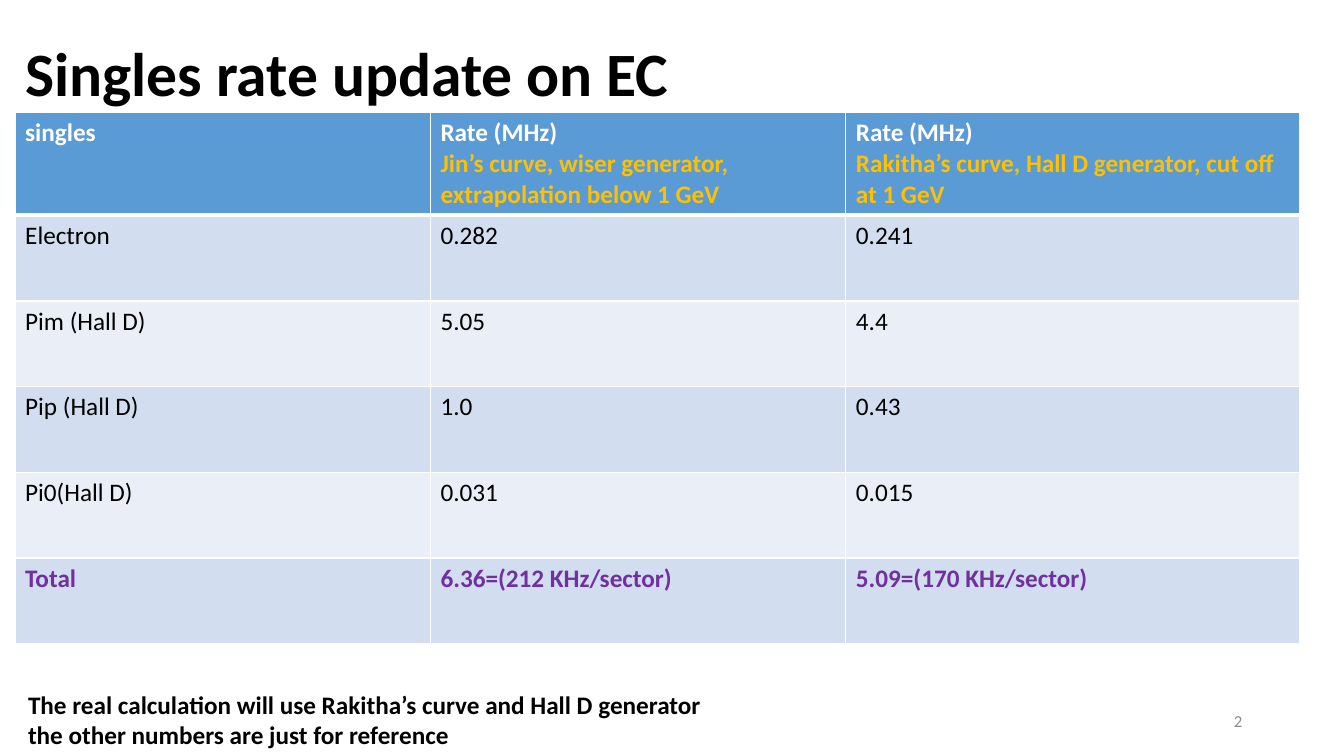
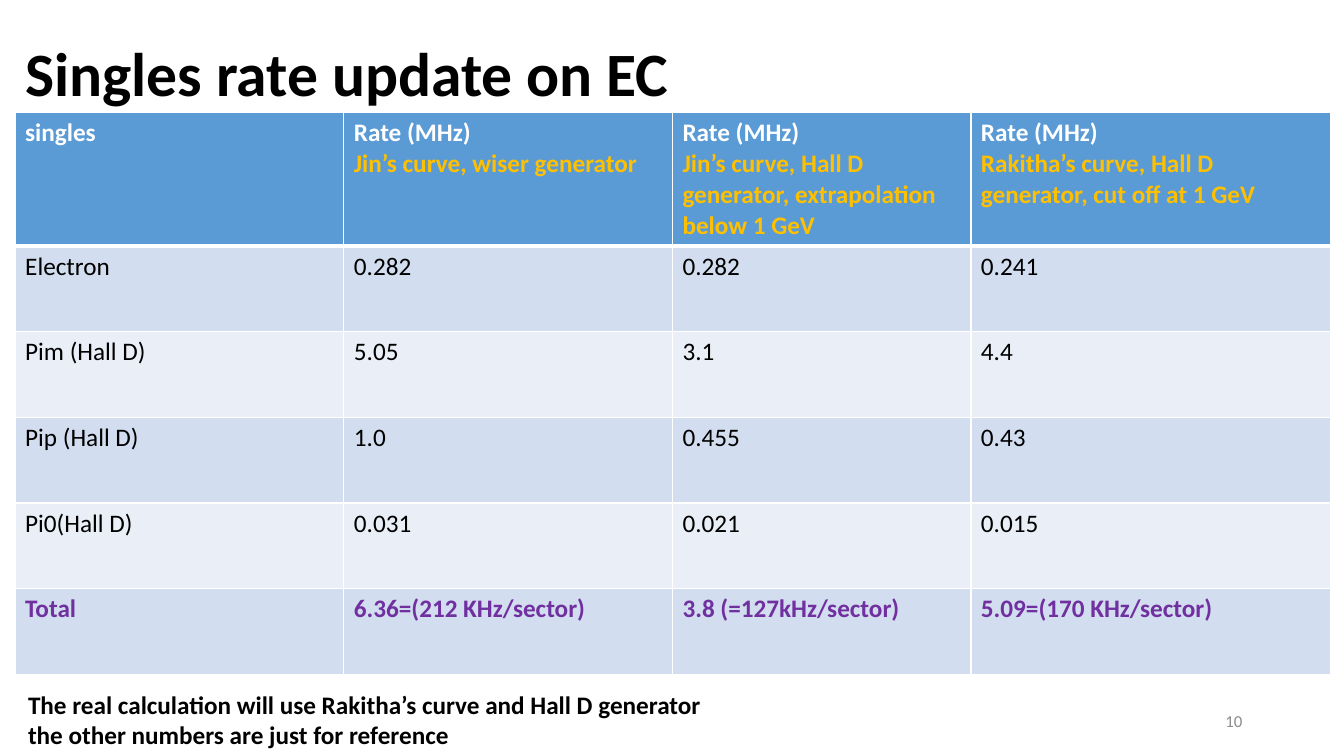
from lxml import etree
from pptx import Presentation, util as u
from pptx.dml.color import RGBColor
from pptx.enum import text
from pptx.oxml.ns import qn

PX = 9144
FONT = "Calibri"
BLACK, WHITE, GREY = "000000", "FFFFFF", "8C8C8C"
BLUE, GOLD, PURPLE = "5B9BD5", "FFC000", "7030A0"
BANDS = "D2DEEF", "EAEFF7"
TITLE = "Singles rate update on EC"
NOTE = ("The real calculation will use Rakitha’s curve and Hall D generator\n"
        "the other numbers are just for reference")
LABELS = ["Electron", "Pim (Hall D)", "Pip (Hall D)", "Pi0(Hall D)", "Total"]
JIN_WISER = ["0.282", "5.05", "1.0", "0.031", "6.36=(212 KHz/sector)"]
JIN_HALL_D = ["0.282", "3.1", "0.455", "0.021", "3.8 (=127kHz/sector)"]
RAKITHA = ["0.241", "4.4", "0.43", "0.015", "5.09=(170 KHz/sector)"]
RAKITHA_HEAD = "Rate (MHz)\nRakitha’s curve, Hall D generator, cut off at 1 GeV"
ROW_H = 85


def px(n):
    """Turn whole px (100 to the inch) into EMU."""
    return u.Emu(n * PX)


def rgb(value):
    """Turn a hex string into a colour."""
    return RGBColor.from_string(value)


def style(p, size, color, bold=False):
    """Format every run of a paragraph."""
    for r in p.runs:
        r.font.name, r.font.size, r.font.bold = FONT, u.Pt(size), bold
        r.font.color.rgb = rgb(color)


def add_title(s, title):
    """Fill and place the title placeholder."""
    sp = s.shapes.title
    sp.left, sp.top, sp.width, sp.height = px(15), px(3), px(1211), px(145)
    tf = sp.text_frame
    tf.text = title
    tf.auto_size = text.MSO_AUTO_SIZE.NONE
    tf.vertical_anchor = text.MSO_ANCHOR.MIDDLE
    p = tf.paragraphs[0]
    p.alignment, p.line_spacing = text.PP_ALIGN.LEFT, 0.9
    style(p, 44, BLACK, True)


def add_text(s, box, content, size, color, bold=False, wrap=True,
             align=text.PP_ALIGN.LEFT, anchor=text.MSO_ANCHOR.TOP):
    """Add a text box with one paragraph per line."""
    tf = s.shapes.add_textbox(*map(px, box)).text_frame
    tf.word_wrap, tf.vertical_anchor = wrap, anchor
    tf.text = content
    for p in tf.paragraphs:
        p.alignment = align
        style(p, size, color, bold)


def add_borders(cell, top, bottom):
    """Draw white cell borders, with top and bottom widths in points."""
    tc_pr = cell._tc.get_or_add_tcPr()
    for side, width in zip("LRTB", (1, 1, top, bottom)):
        ln = etree.SubElement(tc_pr, qn(f"a:ln{side}"), w=str(u.Pt(width)))
        fill = etree.SubElement(ln, qn("a:solidFill"))
        etree.SubElement(fill, qn("a:srgbClr"), val=WHITE)


def fill_cell(cell, row, content, last):
    """Write and format one cell according to its row."""
    add_borders(cell, 3 if row == 1 else 1, 3 if row == 0 else 1)
    cell.fill.solid()
    cell.fill.fore_color.rgb = rgb(BANDS[(row - 1) % 2] if row else BLUE)
    cell.text_frame.text = content
    for i, p in enumerate(cell.text_frame.paragraphs):
        if row == 0:
            style(p, 18, GOLD if i else WHITE, True)
        else:
            style(p, 18, PURPLE if last else BLACK, last)


def add_rates(s, head_h, columns):
    """Add the rate table from (width, heading, values) columns."""
    count = len(LABELS) + 1
    width = sum(column[0] for column in columns)
    table = s.shapes.add_table(count, len(columns), px(15), px(112), px(width),
                               px(head_h + ROW_H * len(LABELS))).table
    for row in range(count):
        table.rows[row].height = px(ROW_H if row else head_h)
    for c, (col_w, heading, values) in enumerate(columns):
        table.columns[c].width = px(col_w)
        for row, content in enumerate([heading, *values]):
            fill_cell(table.cell(row, c), row, content, row == count - 1)


def add_slide(prs, number, head_h, columns):
    """Add one slide with title, rate table, page number and note."""
    s = prs.slides.add_slide(prs.slide_layouts[5])
    add_title(s, TITLE)
    add_rates(s, head_h, columns)
    add_text(s, (942, 695, 300, 40), number, 12, GREY,
             align=text.PP_ALIGN.RIGHT, anchor=text.MSO_ANCHOR.MIDDLE)
    add_text(s, (18, 679, 704, 71), NOTE, 18, BLACK, bold=True, wrap=False)


def main():
    """Build and save the presentation."""
    prs = Presentation()
    prs.slide_width, prs.slide_height = px(1333), px(750)
    add_slide(prs, "2", 101, [
        (412, "singles", LABELS),
        (412, "Rate (MHz)\nJin’s curve, wiser generator, "
              "extrapolation below 1 GeV", JIN_WISER),
        (450, RAKITHA_HEAD, RAKITHA),
    ])
    add_slide(prs, "10", 132, [
        (326, "singles", LABELS),
        (326, "Rate (MHz)\nJin’s curve, wiser generator", JIN_WISER),
        (296, "Rate (MHz)\nJin’s curve, Hall D generator, "
              "extrapolation below 1 GeV", JIN_HALL_D),
        (357, RAKITHA_HEAD, RAKITHA),
    ])
    prs.save("out.pptx")


if __name__ == "__main__":
    main()
